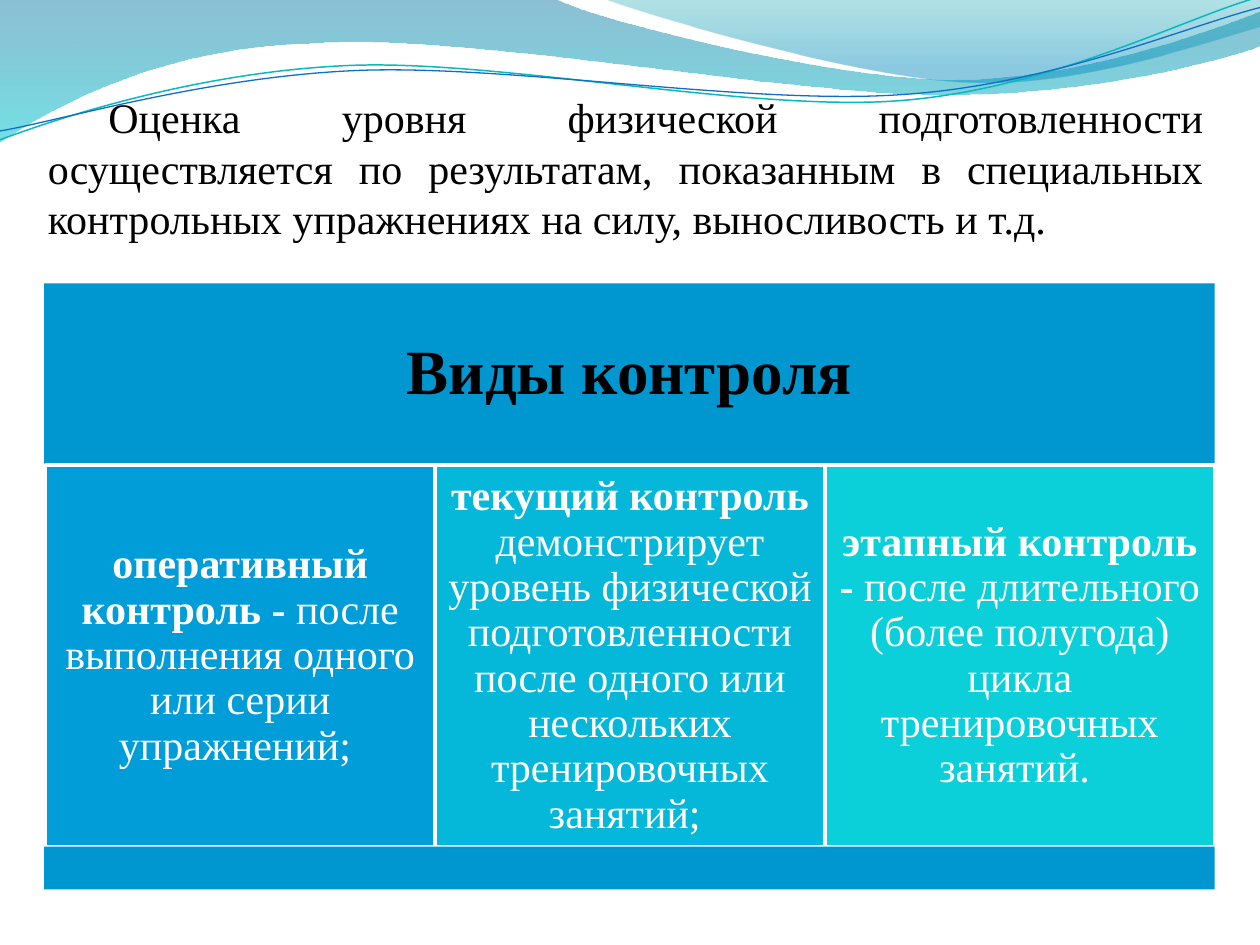
import math
from dataclasses import dataclass

from pptx import Presentation
from pptx import util as u
from pptx.dml.color import RGBColor
from pptx.enum import shapes, text
from pptx.oxml import parse_xml
from pptx.oxml.ns import nsdecls, qn

COLUMNS, ROWS = 10, 7.5


@dataclass(frozen=True)
class Theme:
    """Colours, font and type sizes of the slide."""
    font: str = "Times New Roman"
    body_size: int = 24
    heading_size: int = 36
    dark: str = "000000"
    light: str = "FFFFFF"
    band: str = "0096CF"
    cards: tuple = ("009DD9", "05B7D9", "0BD0D9")
    wave_wide: tuple = ((0, "0074A1", 45), (1, "00C6CF", 55))
    wave_right: tuple = ((0, "00A1A9", 30), (0.8, "008BBF", 45))
    thread_teal: str = "0AB8BF"
    thread_blue: str = "0F6FC6"


def write(paragraph, content, *, theme, size, color, bold=False):
    """Add a formatted run to a paragraph."""
    run = paragraph.add_run()
    run.text = content
    run.font.name = theme.font
    run.font.size = u.Pt(size)
    run.font.bold = bold
    run.font.color.rgb = RGBColor.from_string(color)


def turn(segment, center, degrees):
    """Turn the points of a segment clockwise about a center."""
    angle = math.radians(degrees)
    turned = []
    for x, y in zip(segment[::2], segment[1::2]):
        across, down = x - center[0], y - center[1]
        turned += [center[0] + across * math.cos(angle) - down * math.sin(angle),
                   center[1] + across * math.sin(angle) + down * math.cos(angle)]
    return tuple(turned)


class SlideBuilder:
    """Holds the theme and the current slide and adds elements by grid place."""

    def __init__(self, presentation, theme):
        """Start a slide on the title-and-content layout."""
        self.theme = theme
        self.column = presentation.slide_width / COLUMNS
        self.row = presentation.slide_height / ROWS
        self.slide = presentation.slides.add_slide(presentation.slide_layouts[1])
        title = self.slide.shapes.title.element
        title.getparent().remove(title)

    def place(self, x, y):
        """Convert a grid position to slide units."""
        return round(x * self.column), round(y * self.row)

    def outline(self, segments, close):
        """Draw a freeform of lines and cubic curves without fill or line."""
        ends = [self.place(*segment[-2:]) for segment in segments]
        builder = self.slide.shapes.build_freeform(*ends[0], scale=1.0)
        builder.add_line_segments(ends[1:], close=close)
        shape = builder.convert_to_shape()
        lines = list(shape.element.iter(qn("a:lnTo")))
        for line, segment in zip(lines, segments[1:]):
            if len(segment) == 6:
                points = [self.place(*segment[i:i + 2]) for i in (0, 2, 4)]
                nodes = "".join(f'<a:pt x="{x - shape.left}" y="{y - shape.top}"/>'
                                for x, y in points)
                line.getparent().replace(line, parse_xml(
                    f'<a:cubicBezTo {nsdecls("a")}>{nodes}</a:cubicBezTo>'))
        shape.shadow.inherit = False
        shape.fill.background()
        shape.line.fill.background()
        return shape

    def wave(self, segments, stops):
        """Draw a closed wave with a translucent vertical gradient."""
        shape = self.outline(segments, True)
        shape.fill.gradient()
        shape.fill.gradient_angle = 270
        for stop, (position, color, _) in zip(shape.fill.gradient_stops, stops):
            stop.position = position
            stop.color.rgb = RGBColor.from_string(color)
        for node, (_, _, opacity) in zip(shape.element.iter(qn("a:srgbClr")), stops):
            node.append(parse_xml(f'<a:alpha {nsdecls("a")} val="{opacity * 1000}"/>'))

    def thread(self, segments, center, color, width, tilt=2.7):
        """Draw an open curve as a shape tilted counterclockwise."""
        shape = self.outline([turn(segment, center, tilt) for segment in segments], False)
        shape.rotation = 360 - tilt
        shape.line.color.rgb = RGBColor.from_string(color)
        shape.line.width = u.Pt(width)

    def body(self, left, top, width, height, content):
        """Fill the body placeholder with a justified, indented paragraph."""
        shape = self.slide.placeholders[1]
        shape.left, shape.top = self.place(left, top)
        shape.width, shape.height = self.place(width, height)
        shape.text_frame.auto_size = text.MSO_AUTO_SIZE.NONE
        paragraph = shape.text_frame.paragraphs[0]
        paragraph.alignment = text.PP_ALIGN.JUSTIFY
        properties = paragraph._p.get_or_add_pPr()
        properties.set("marL", "0")
        properties.set("indent", str(u.Inches(0.48)))
        properties.append(parse_xml(f'<a:buNone {nsdecls("a")}/>'))
        write(paragraph, content, theme=self.theme, size=self.theme.body_size,
              color=self.theme.dark)
        self.slide.shapes.element.append(shape.element)

    def box(self, left, top, width, height, fill, border=None, inset=0.1):
        """Draw a rectangle and return its centred paragraph."""
        shape = self.slide.shapes.add_shape(
            shapes.MSO_SHAPE.RECTANGLE, *self.place(left, top), *self.place(width, height))
        shape.shadow.inherit = False
        shape.fill.solid()
        shape.fill.fore_color.rgb = RGBColor.from_string(fill)
        if border:
            shape.line.color.rgb = RGBColor.from_string(border)
            shape.line.width = u.Pt(2)
        else:
            shape.line.fill.background()
        frame = shape.text_frame
        frame.word_wrap = True
        frame.vertical_anchor = text.MSO_ANCHOR.MIDDLE
        frame.margin_left = frame.margin_right = u.Inches(inset)
        frame.margin_top = frame.margin_bottom = u.Inches(inset)
        paragraph = frame.paragraphs[0]
        paragraph.alignment = text.PP_ALIGN.CENTER
        paragraph.line_spacing = 0.9
        return paragraph


WIDE_WAVE = [
    (0, 0), (4.4, -0.01),
    (4.76, 0.17, 6.64, 0.63, 7.58, 0.63), (8.53, 0.63, 9.58, 0.26, 10, 0.09),
    (10.01, 0.36),
    (9.83, 0.44, 8.7, 0.76, 7.46, 0.75), (6.22, 0.75, 3.82, 0.28, 2.57, 0.34),
    (1.29, 0.36, 0.46, 0.83, -0.01, 1.13), (0, 0)]
RIGHT_WAVE = [
    (4.79, -0.01),
    (5.09, 0.11, 6.82, 0.62, 7.69, 0.65), (8.56, 0.69, 9.61, 0.32, 10, 0.21),
    (10, 0), (4.79, -0.01)]
TEAL_THREAD = [
    (0, 1.11),
    (0.48, 0.93, 1.58, 0.57, 2.77, 0.52), (3.95, 0.47, 5.93, 0.89, 7.13, 0.8),
    (8.33, 0.71, 9.38, 0.15, 9.98, -0.02)]
BLUE_THREAD = [
    (0, 1.04),
    (0.47, 0.96, 1.64, 0.61, 2.83, 0.56), (4.03, 0.51, 5.97, 0.84, 7.17, 0.75),
    (8.36, 0.67, 9.41, 0.21, 10, 0.06)]
INTRO = ("Оценка уровня физической подготовленности осуществляется по результатам, "
         "показанным в специальных контрольных упражнениях на силу, выносливость и т.д.")
CONTROLS = [
    ("оперативный контроль -", " после выполнения одного или серии упражнений; "),
    ("текущий контроль ", "демонстрирует уровень физической подготовленности "
     "после одного или нескольких тренировочных занятий; "),
    ("этапный контроль -", " после длительного (более полугода) цикла "
     "тренировочных занятий. ")]


def main():
    """Build the slide and save it."""
    theme = Theme()
    presentation = Presentation()
    presentation.slide_width, presentation.slide_height = u.Inches(10), u.Inches(7.5)
    builder = SlideBuilder(presentation, theme)
    builder.wave(WIDE_WAVE, theme.wave_wide)
    builder.wave(RIGHT_WAVE, theme.wave_right)
    builder.thread(TEAL_THREAD, (4.99, 0.57), theme.thread_teal, 0.85)
    builder.thread(BLUE_THREAD, (5, 0.59), theme.thread_blue, 0.75)
    builder.body(0.28, 0.68, 9.37, 6.24, INTRO)

    heading = builder.box(0.35, 2.25, 9.29, 1.44, theme.band, inset=0.15)
    write(heading, "Виды контроля", theme=theme, size=theme.heading_size,
          color=theme.dark, bold=True)
    card_width = 9.28 / len(CONTROLS)
    for index, (name, detail) in enumerate(CONTROLS):
        card = builder.box(0.36 + index * card_width, 3.69, card_width, 3.03,
                           theme.cards[index], border=theme.light)
        for content, bold in ((name, True), (detail, False)):
            write(card, content, theme=theme, size=theme.body_size,
                  color=theme.light, bold=bold)
    builder.box(0.35, 6.72, 9.29, 0.34, theme.band)
    presentation.save("out.pptx")


if __name__ == "__main__":
    main()
